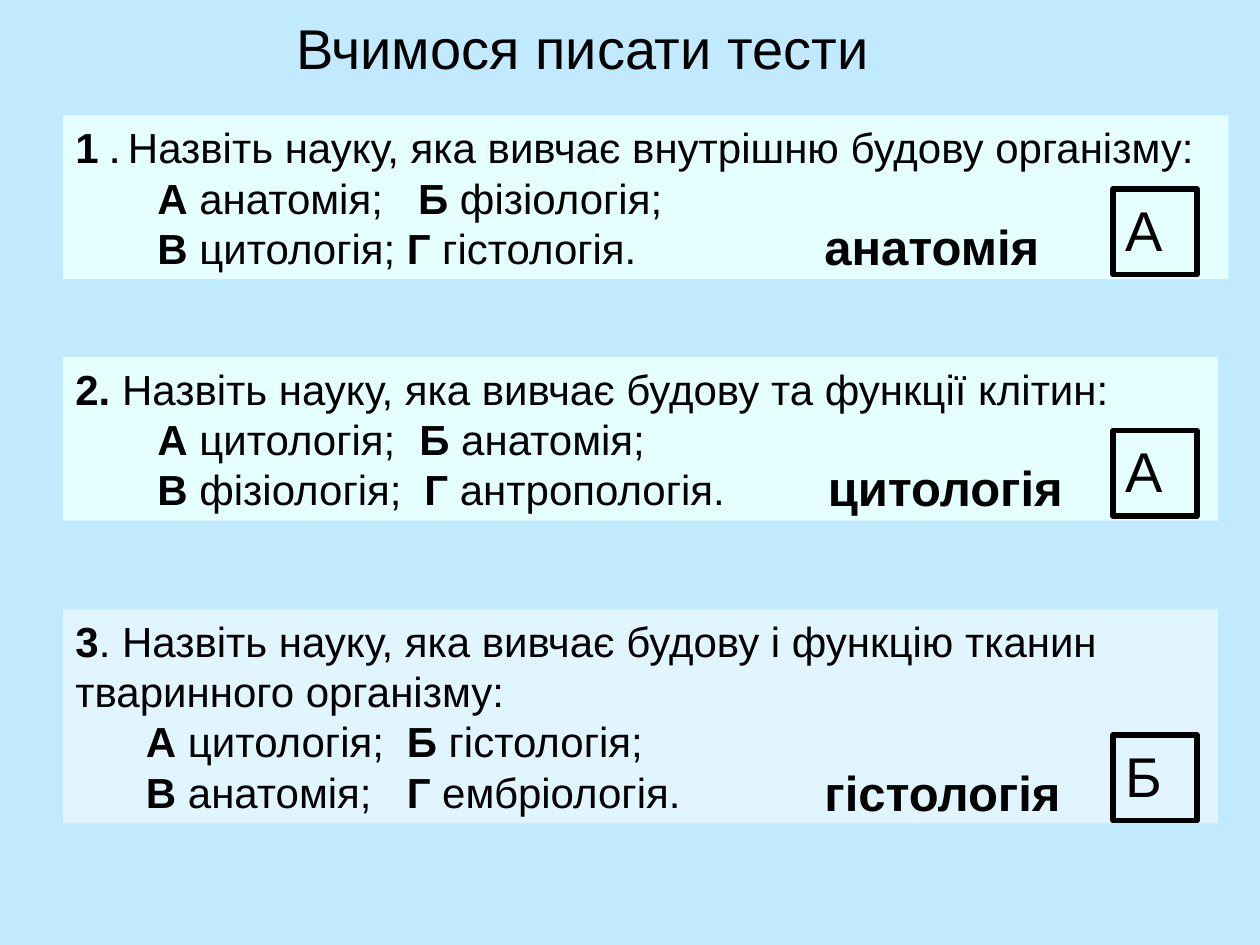
from pptx import Presentation
from pptx.dml.color import RGBColor
from pptx.enum.shapes import MSO_SHAPE as Kind
from pptx.enum.text import MSO_ANCHOR as Anchor, PP_ALIGN as Align
from pptx.oxml.ns import qn
from pptx.util import Inches, Pt
from lxml.etree import SubElement

WIDE, HIGH = Inches(10), Inches(7.5)
COLS, ROWS = 120, 90
INK = "000000"

CARDS = [
    dict(box=(6, 11, 111, 15.6), fill="E5FFFF", drop=7,
         head=[("1 ", True, 24), (". ", True, 18),
               ("Назвіть науку, яка вивчає внутрішню будову організму:", False, 24)],
         rows=[("А", "анатомія;", "Б", "фізіологія;", 2.72),
               ("В", "цитологія;", "Г", "гістологія.", 2.63)],
         tab=0.65, word="анатомія", span=(76, 25), inset=0.21, mark="А"),
    dict(box=(6, 34, 110, 15.6), fill="E5FFFF", drop=7,
         head=[("2. ", True, 24),
               ("Назвіть науку, яка вивчає будову та функції клітин:", False, 24)],
         rows=[("А", "цитологія;", "Б", "анатомія;", 2.73),
               ("В", "фізіологія;", "Г", "антропологія.", 2.77)],
         tab=0.65, word="цитологія", span=(75, 29), inset=0.32, mark="А"),
    dict(box=(6, 58, 110, 20.4), fill="E1F5FF", drop=12,
         head=[("3", True, 24),
               (". Назвіть науку, яка вивчає будову і функцію тканин тваринного організму:",
                False, 24)],
         rows=[("А", "цитологія;", "Б", "гістологія;", 2.63),
               ("В", "анатомія;", "Г", "ембріологія.", 2.63)],
         tab=0.56, word="гістологія", span=(76, 28), inset=0.21, mark="Б"),
]


def tint(code):
    return RGBColor.from_string(code)


def place(box):
    x, y, w, h = box
    return [int(v) for v in (WIDE * x / COLS, HIGH * y / ROWS,
                             WIDE * w / COLS, HIGH * h / ROWS)]


def write(para, text, bold=False, size=24):
    run = para.add_run()
    run.text = text
    font = run.font
    font.name, font.size, font.bold = "Arial", Pt(size), bold
    font.color.rgb = tint(INK)


def set_tabs(para, stops):
    tabs = SubElement(para._p.get_or_add_pPr(), qn("a:tabLst"))
    for stop in stops:
        SubElement(tabs, qn("a:tab"), pos=str(Inches(stop)), algn="l")


def add_rect(slide, box, fill=None, line=None):
    rect = slide.shapes.add_shape(Kind.RECTANGLE, *place(box))
    rect.shadow.inherit = False
    if fill:
        rect.fill.solid()
        rect.fill.fore_color.rgb = tint(fill)
    else:
        rect.fill.background()
    if line:
        rect.line.color.rgb = tint(line)
        rect.line.width = Pt(3)
    else:
        rect.line.fill.background()
    frame = rect.text_frame
    frame.word_wrap = True
    frame.vertical_anchor = Anchor.TOP
    frame.paragraphs[0].alignment = Align.LEFT
    return frame


def add_title(slide, box, text):
    title = slide.shapes.title
    title.left, title.top, title.width, title.height = place(box)
    frame = title.text_frame
    frame.vertical_anchor = Anchor.MIDDLE
    para = frame.paragraphs[0]
    para.alignment = Align.CENTER
    write(para, text, size=32)


def add_card(slide, box, fill, drop, head, rows, tab, word, span, inset, mark):
    top = box[1] + drop
    frame = add_rect(slide, box, fill)
    for part in head:
        write(frame.paragraphs[0], *part)
    for key, name, key2, name2, stop in rows:
        para = frame.add_paragraph()
        para.alignment = Align.LEFT
        set_tabs(para, (tab, stop))
        write(para, f"\t{key} ", True)
        write(para, f"{name}\t")
        write(para, f"{key2} ", True)
        write(para, name2)

    left, wide = span
    label = slide.shapes.add_textbox(*place((left, top + 2, wide, 6.84)))
    frame = label.text_frame
    frame.word_wrap = True
    frame.margin_left = Inches(inset)
    write(frame.paragraphs[0], word, True, 28)

    frame = add_rect(slide, (106, top, 8, 8.16), line=INK)
    write(frame.paragraphs[0], mark, size=32)


def main():
    deck = Presentation()
    deck.slide_width, deck.slide_height = WIDE, HIGH
    slide = deck.slides.add_slide(deck.slide_layouts[5])
    back = slide.background.fill
    back.solid()
    back.fore_color.rgb = tint("C1EAFF")
    add_title(slide, (23, 0, 65, 9), "Вчимося писати тести")
    for card in CARDS:
        add_card(slide, **card)
    deck.save("out.pptx")


if __name__ == "__main__":
    main()
